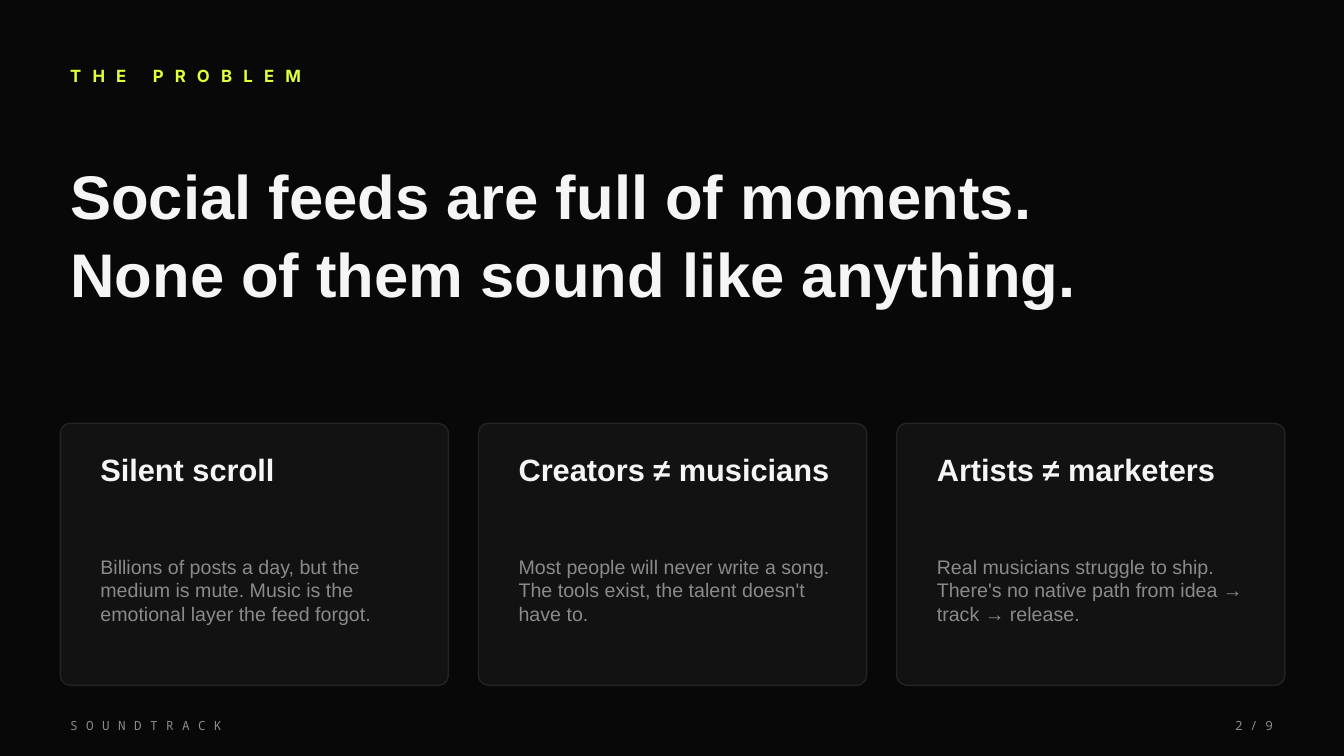
from dataclasses import dataclass

from pptx import Presentation
from pptx.dml.color import RGBColor
from pptx.enum.shapes import MSO_SHAPE
from pptx.enum.text import MSO_ANCHOR, MSO_AUTO_SIZE, PP_ALIGN
from pptx.util import Cm, Pt

ROUNDED = MSO_SHAPE.ROUNDED_RECTANGLE
MIDDLE = MSO_ANCHOR.MIDDLE
NO_FIT = MSO_AUTO_SIZE.NONE
LEFT, RIGHT = PP_ALIGN.LEFT, PP_ALIGN.RIGHT


@dataclass(frozen=True)
class Style:
    size: float
    font: str
    color: str
    bold: bool = False
    tracking: float = 0
    line_spacing: float = 1.0


@dataclass(frozen=True)
class Theme:
    background: str = "080808"
    card: str = "121212"
    border: str = "232323"
    eyebrow: Style = Style(12, "Inter", "E2FF3B", True, 8)
    title: Style = Style(44, "Arial", "F5F5F5", True, line_spacing=1.05)
    heading: Style = Style(22, "Arial", "F5F5F5", True)
    body: Style = Style(14, "Arial", "8A8A8A")
    brand: Style = Style(9, "Noto Sans Mono", "8A8A8A", tracking=6)
    page: Style = Style(9, "Noto Sans Mono", "8A8A8A")


THEME = Theme()
MARGIN = 1.52
CONTENT_W = 30.48
CARDS = [
    ("Silent scroll",
     "Billions of posts a day, but the medium is mute. "
     "Music is the emotional layer the feed forgot."),
    ("Creators ≠ musicians",
     "Most people will never write a song. "
     "The tools exist, the talent doesn't have to."),
    ("Artists ≠ marketers",
     "Real musicians struggle to ship. "
     "There's no native path from idea → track → release."),
]


def rgb(value):
    return RGBColor.from_string(value)


def write(tf, lines, style, align=LEFT):
    tf.word_wrap = True
    tf.auto_size = NO_FIT
    tf.vertical_anchor = MIDDLE
    for i, line in enumerate(lines):
        p = tf.add_paragraph() if i else tf.paragraphs[0]
        r = p.add_run()
        r.text = line
        p.alignment = align
        p.line_spacing = style.line_spacing
        p.font.size = Pt(style.size)
        p.font.name = style.font
        p.font.bold = style.bold
        p.font.color.rgb = rgb(style.color)
        if style.tracking:
            r.font._element.set("spc", str(int(style.tracking * 100)))


def add_text(s, x, y, w, h, text, style, align=LEFT):
    box = s.shapes.add_textbox(Cm(x), Cm(y), Cm(w), Cm(h))
    write(box.text_frame, [text], style, align)


def add_header(s, x, y, w):
    add_text(s, x, y, w, 1.02, "THE PROBLEM", THEME.eyebrow)
    title = s.shapes.title
    title.left, title.top = Cm(x), Cm(y + 1.65)
    title.width, title.height = Cm(w), Cm(5.59)
    write(title.text_frame,
          ["Social feeds are full of moments.",
           "None of them sound like anything."], THEME.title)


def add_card(s, x, y, w, h, heading, body):
    card = s.shapes.add_shape(ROUNDED, Cm(x), Cm(y), Cm(w), Cm(h))
    card.adjustments[0] = 0.038
    card.shadow.inherit = False
    card.fill.solid()
    card.fill.fore_color.rgb = rgb(THEME.card)
    card.line.color.rgb = rgb(THEME.border)
    card.line.width = Pt(1)
    inset, text_w = 0.76, w - 1.14
    add_text(s, x + inset, y + 0.51, text_w, 1.27, heading, THEME.heading)
    add_text(s, x + inset, y + 2.03, text_w, 4.32, body, THEME.body)


def add_cards(s, x, y, w, h, gap):
    card_w = (w - gap * (len(CARDS) - 1)) / len(CARDS)
    for i, (heading, body) in enumerate(CARDS):
        add_card(s, x + i * (card_w + gap), y, card_w, h, heading, body)


def add_footer(s, x, y, w):
    page_w = 2.54
    add_text(s, x, y, 10.16, 0.76, "SOUNDTRACK", THEME.brand)
    add_text(s, x + w - page_w, y, page_w, 0.76, "2 / 9", THEME.page, RIGHT)


def add_problem_slide(prs):
    s = prs.slides.add_slide(prs.slide_layouts[5])
    s.background.fill.solid()
    s.background.fill.fore_color.rgb = rgb(THEME.background)
    add_header(s, MARGIN, 1.4, CONTENT_W)
    add_cards(s, MARGIN, 10.67, 30.86, 6.6, 0.76)
    add_footer(s, MARGIN, 17.91, 30.81)


def main():
    prs = Presentation()
    prs.slide_width, prs.slide_height = Cm(33.87), Cm(19.05)
    add_problem_slide(prs)
    prs.save("out.pptx")


if __name__ == "__main__":
    main()
